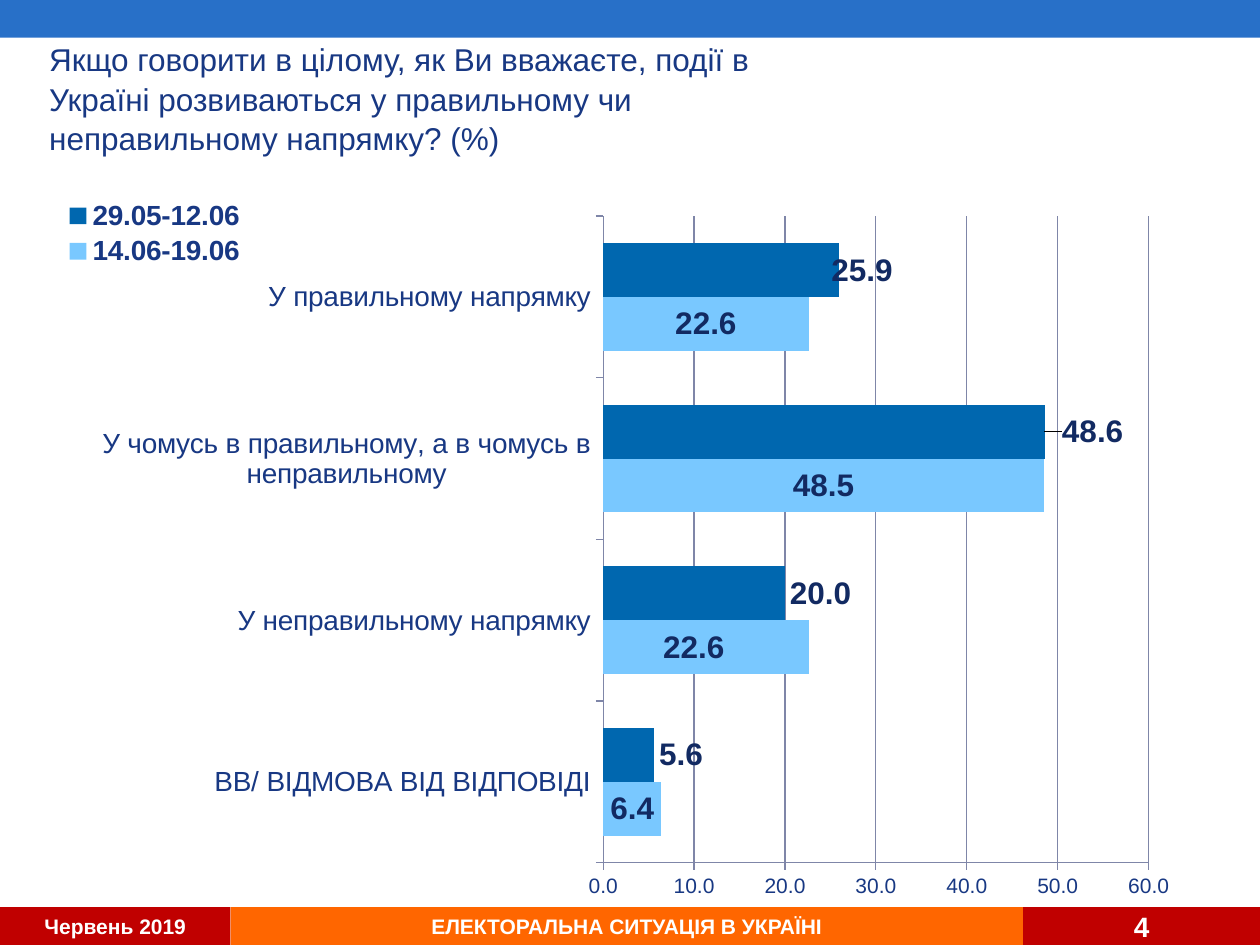
import dataclasses

import lxml.etree
import pptx
import pptx.chart.data
import pptx.dml.color
import pptx.enum.chart
import pptx.enum.shapes
import pptx.enum.text
import pptx.oxml.ns
import pptx.util

Inches = pptx.util.Inches
Pt = pptx.util.Pt
qn = pptx.oxml.ns.qn
Spot = pptx.enum.chart.XL_LABEL_POSITION
Align = pptx.enum.text.PP_ALIGN
Middle = pptx.enum.text.MSO_ANCHOR.MIDDLE


@dataclasses.dataclass(frozen=True)
class Theme:
    face: str = "Arial"
    white: str = "FFFFFF"
    ink: str = "183883"
    label: str = "122A62"
    grid: str = "7F86A8"
    blue: str = "2870C8"
    red: str = "C00000"
    orange: str = "FF6600"
    dark: str = "0067AF"
    light: str = "79C8FF"
    large: int = 18
    mid: int = 16
    small: int = 12


THEME = Theme()

CATS = [
    "ВВ/ ВIДМОВА ВIД ВIДПОВIДI",
    "У неправильному напрямку",
    "У чомусь в правильному, а в чомусь в неправильному",
    "У правильному напрямку",
]
# Name, values, colour, label position, label shifts by point
WAVES = [
    ("14.06-19.06", (6.4, 22.6, 48.5, 22.6), THEME.light, Spot.CENTER, {1: -0.01}),
    ("29.05-12.06", (5.6, 20, 48.6, 25.9), THEME.dark, Spot.OUTSIDE_END,
     {2: 0.01, 3: -0.01}),
]


def rgb(code):
    return pptx.dml.color.RGBColor.from_string(code)


def style(font, size, color, bold=False):
    font.name = THEME.face
    font.size = Pt(size)
    font.bold = bold
    font.color.rgb = rgb(color)


def layout(node, index, **parts):
    """Give a chart part a manual layout."""
    for old in node.findall(qn("c:layout")):
        node.remove(old)
    outer = lxml.etree.Element(qn("c:layout"))
    inner = lxml.etree.SubElement(outer, qn("c:manualLayout"))
    for name, value in parts.items():
        lxml.etree.SubElement(inner, qn("c:" + name)).set("val", str(value))
    node.insert(index, outer)


def band(slide, box, color, text="", size=THEME.small):
    shape = slide.shapes.add_shape(pptx.enum.shapes.MSO_SHAPE.RECTANGLE, *box)
    shape.shadow.inherit = False
    shape.fill.solid()
    shape.fill.fore_color.rgb = rgb(color)
    shape.line.fill.background()
    if text:
        frame = shape.text_frame
        frame.margin_top = frame.margin_bottom = 0
        frame.vertical_anchor = Middle
        frame.text = text
        para = frame.paragraphs[0]
        para.alignment = Align.CENTER
        style(para.runs[0].font, size, THEME.white, True)


def footer(slide, box):
    left, top, width, height = box
    date, page = Inches(1.83), Inches(1.88)
    band(slide, (left, top, date, height), THEME.red, "Червень 2019")
    band(slide, (left + date, top, width - date - page, height),
         THEME.orange, "ЕЛЕКТОРАЛЬНА СИТУАЦІЯ В УКРАЇНІ")
    band(slide, (left + width - page, top, page, height),
         THEME.red, "4", THEME.mid)


def title(slide, box):
    shape = slide.shapes.title
    shape.left, shape.top, shape.width, shape.height = box
    frame = shape.text_frame
    frame.word_wrap = True
    frame.auto_size = pptx.enum.text.MSO_AUTO_SIZE.NONE
    frame.vertical_anchor = Middle
    frame.margin_left, frame.margin_right = Inches(0.22), Inches(0.1)
    frame.margin_top = frame.margin_bottom = Inches(0.05)
    frame.text = ("Якщо говорити в цілому, як Ви вважаєте, події в Україні "
                  "розвиваються у правильному чи неправильному напрямку? (%)")
    para = frame.paragraphs[0]
    para.alignment = Align.LEFT
    para.line_spacing = 1.05
    style(para.runs[0].font, THEME.large, THEME.ink)


def axis_look(axis, size):
    style(axis.tick_labels.font, size, THEME.ink)
    axis.major_tick_mark = pptx.enum.chart.XL_TICK_MARK.OUTSIDE
    axis.minor_tick_mark = pptx.enum.chart.XL_TICK_MARK.NONE
    axis.format.line.color.rgb = rgb(THEME.grid)
    axis.format.line.width = Pt(0.75)


def series_look(series, color, spot, shifts):
    series.format.fill.solid()
    series.format.fill.fore_color.rgb = rgb(color)
    series.invert_if_negative = False
    labels = series.data_labels
    labels.show_value = True
    labels.number_format = "0.0"
    labels.number_format_is_linked = False
    labels.position = spot
    style(labels.font, THEME.large, THEME.label, True)
    # Nudge single labels sideways
    for index, shift in shifts.items():
        label = series.points[index].data_label
        label.position = spot
        style(label.font, THEME.large, THEME.label, True)
    for node, index in zip(labels._element.findall(qn("c:dLbl")), sorted(shifts)):
        layout(node, 1, x=shifts[index], y=0)


def bars(slide, box):
    data = pptx.chart.data.CategoryChartData(number_format="0.0")
    data.categories = CATS
    for name, values, *_ in WAVES:
        data.add_series(name, values)
    kind = pptx.enum.chart.XL_CHART_TYPE.BAR_CLUSTERED
    chart = slide.shapes.add_chart(kind, *box, data).chart
    style(chart.font, THEME.large, THEME.ink)
    chart.has_title = False

    # Axes
    axis_look(chart.category_axis, THEME.mid)
    scale = chart.value_axis
    axis_look(scale, THEME.small)
    scale.minimum_scale, scale.maximum_scale, scale.major_unit = 0, 60, 10
    scale.tick_labels.number_format = "0.0"
    scale.tick_labels.number_format_is_linked = False
    scale.has_major_gridlines = True
    scale.major_gridlines.format.line.color.rgb = rgb(THEME.grid)
    scale.major_gridlines.format.line.width = Pt(0.75)

    # Bars and labels
    plot = chart.plots[0]
    plot.gap_width = 100
    plot.vary_by_categories = False
    for series, (_, _, *look) in zip(plot.series, WAVES):
        series_look(series, *look)

    # Legend and plot area
    chart.has_legend = True
    legend = chart.legend
    legend.position = pptx.enum.chart.XL_LEGEND_POSITION.RIGHT
    legend.include_in_layout = False
    style(legend.font, THEME.mid, THEME.ink, True)
    layout(legend._element, 1, xMode="edge", yMode="edge",
           x=0.01, y=0, w=0.2, h=0.11)
    area = chart._chartSpace.find(".//" + qn("c:plotArea"))
    layout(area, 0, layoutTarget="inner", xMode="edge", yMode="edge",
           x=0.48, y=0.03, w=0.45, h=0.93)


def main():
    deck = pptx.Presentation()
    deck.slide_width, deck.slide_height = Inches(10), Inches(7.5)
    slide = deck.slides.add_slide(deck.slide_layouts[5])
    strip = Inches(0.3)
    band(slide, (0, 0, deck.slide_width, strip), THEME.blue)
    footer(slide, (0, deck.slide_height - strip, deck.slide_width, strip))
    bars(slide, (Inches(0.17), Inches(1.55), Inches(9.62), Inches(5.57)))
    title(slide, (Inches(0.17), Inches(0.34), Inches(6.56), Inches(0.87)))
    deck.save("out.pptx")


if __name__ == "__main__":
    main()
